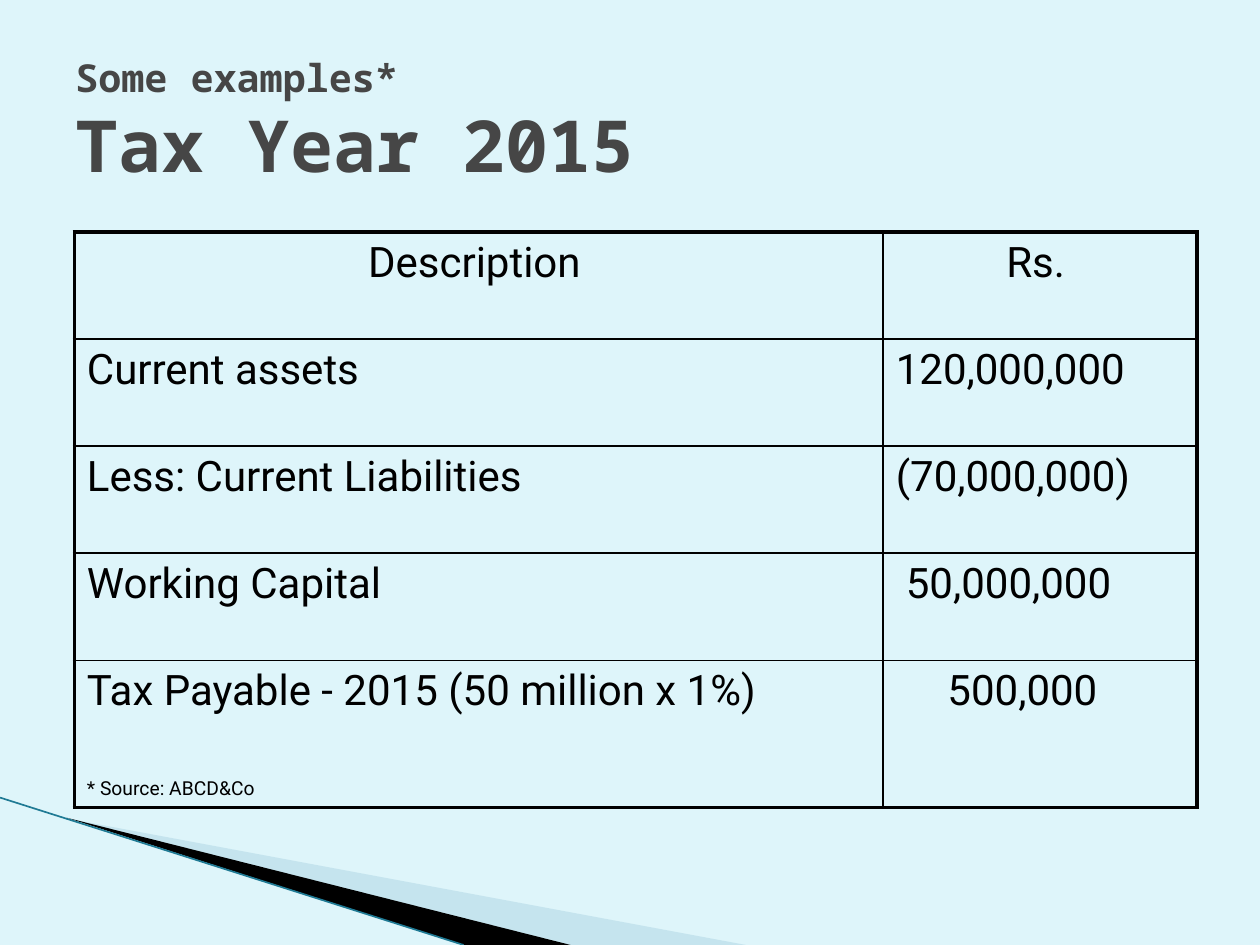
"""Build the Tax Year 2015 working-capital example slide."""
from lxml import etree
from pptx import Presentation, util as u
from pptx.dml.color import RGBColor
from pptx.enum import shapes, text
from pptx.oxml.ns import qn

COLORS = {"ground": "DEF5FA", "title": "464646", "ink": "000000",
          "pale": "A0CBDC", "edge": "1F7A94"}
FONTS = {"title": "Noto Sans Mono", "table": "Roboto"}
WIDTH, HEIGHT = 10, 7.5

HEADING = [("Some examples*", 22), ("Tax Year 2015", 41)]
ENTRIES = [
    ("Description", "Rs."),
    ("Current assets", "120,000,000"),
    ("Less: Current Liabilities", "(70,000,000)"),
    ("Working Capital", "50,000,000"),
    ("Tax Payable - 2015 (50 million x 1%)", "500,000"),
]
SOURCE_NOTE = "* Source: ABCD&Co"
AMOUNT_INDENTS = {3: 0.08, 4: 0.41}
HEADER_INDENT = 0.07
COLUMN_WIDTHS = [6.42, 2.49]
ROW_HEIGHTS = [0.85] * 4 + [1.17]
TABLE_LEFT, TABLE_TOP = 0.59, 1.84
OUTER, INNER = 2.25, 1

WEDGES = [
    ("pale", 40, [(0.55, 6.5), (5.92, HEIGHT), (4.53, HEIGHT)]),
    ("ink", 100, [(0.53, 6.49), (4.53, HEIGHT), (3.68, HEIGHT)]),
]


def rgb(name):
    return RGBColor.from_string(COLORS[name])


def style(paragraph, font, size, color, bold=False):
    for run in paragraph.runs:
        run.font.name, run.font.size, run.font.bold = font, u.Pt(size), bold
        run.font.color.rgb = rgb(color)


def add_wedge(slide, color, opacity, points):
    corners = [(u.Inches(x), u.Inches(y)) for x, y in points]
    builder = slide.shapes.build_freeform(*corners[0])
    builder.add_line_segments(corners[1:], close=True)
    wedge = builder.convert_to_shape()
    wedge.shadow.inherit = False
    wedge.line.fill.background()
    wedge.fill.solid()
    wedge.fill.fore_color.rgb = rgb(color)
    if opacity < 100:
        tint = wedge.fill._xPr.find(".//" + qn("a:srgbClr"))
        etree.SubElement(tint, qn("a:alpha"), val=str(opacity * 1000))


def add_edge(slide):
    edge = slide.shapes.add_connector(
        shapes.MSO_CONNECTOR.STRAIGHT, 0, u.Inches(6.33), u.Inches(3.68), u.Inches(HEIGHT))
    edge.line.color.rgb = rgb("edge")
    edge.line.width = u.Pt(0.95)
    etree.SubElement(edge._element.spPr, qn("a:effectLst"))


def add_heading(slide):
    box = slide.shapes.add_textbox(*map(u.Inches, (0.5, 0.33, 9, 1.25)))
    frame = box.text_frame
    frame.word_wrap = True
    frame.vertical_anchor = text.MSO_ANCHOR.MIDDLE
    frame.text = "\n".join(line for line, _ in HEADING)
    for paragraph, (_, size) in zip(frame.paragraphs, HEADING):
        style(paragraph, FONTS["title"], size, "title", bold=True)


def set_borders(cell, widths):
    properties = cell._tc.get_or_add_tcPr()
    for place, (side, width) in enumerate(widths.items()):
        border = etree.Element(qn("a:ln" + side), w=str(u.Pt(width)))
        fill = etree.SubElement(border, qn("a:solidFill"))
        etree.SubElement(fill, qn("a:srgbClr"), val=COLORS["ink"])
        properties.insert(place, border)


def indent(paragraph, side, inches):
    paragraph._p.get_or_add_pPr().set("mar" + side, str(u.Inches(inches)))


def add_entries(slide):
    last_row, last_column = len(ENTRIES) - 1, len(COLUMN_WIDTHS) - 1
    table = slide.shapes.add_table(
        len(ENTRIES), len(COLUMN_WIDTHS), u.Inches(TABLE_LEFT), u.Inches(TABLE_TOP),
        u.Inches(sum(COLUMN_WIDTHS)), u.Inches(sum(ROW_HEIGHTS))).table
    table.first_row = table.horz_banding = False
    for column, width in zip(table.columns, COLUMN_WIDTHS):
        column.width = u.Inches(width)
    for row, height in zip(table.rows, ROW_HEIGHTS):
        row.height = u.Inches(height)
    for r, entry in enumerate(ENTRIES):
        for c, wording in enumerate(entry):
            cell = table.cell(r, c)
            cell.text_frame.text = wording
            cell.fill.background()
            paragraph = cell.text_frame.paragraphs[0]
            if r == 0:
                paragraph.alignment = text.PP_ALIGN.CENTER
                indent(paragraph, "R", HEADER_INDENT)
            style(paragraph, FONTS["table"], 24, "ink")
            set_borders(cell, {
                "L": INNER if c else OUTER,
                "R": OUTER if c == last_column else INNER,
                "T": INNER if r else OUTER,
                "B": OUTER if r == last_row else INNER,
            })
    for r, inches in AMOUNT_INDENTS.items():
        indent(table.cell(r, last_column).text_frame.paragraphs[0], "L", inches)
    note = table.cell(last_row, 0).text_frame.add_paragraph()
    note.text = SOURCE_NOTE
    note.space_before = u.Pt(35)
    style(note, FONTS["table"], 11, "ink")


def main():
    deck = Presentation()
    deck.slide_width, deck.slide_height = u.Inches(WIDTH), u.Inches(HEIGHT)
    slide = deck.slides.add_slide(deck.slide_layouts[6])
    slide.background.fill.solid()
    slide.background.fill.fore_color.rgb = rgb("ground")
    for wedge in WEDGES:
        add_wedge(slide, *wedge)
    add_edge(slide)
    add_heading(slide)
    add_entries(slide)
    deck.save("out.pptx")


if __name__ == "__main__":
    main()
